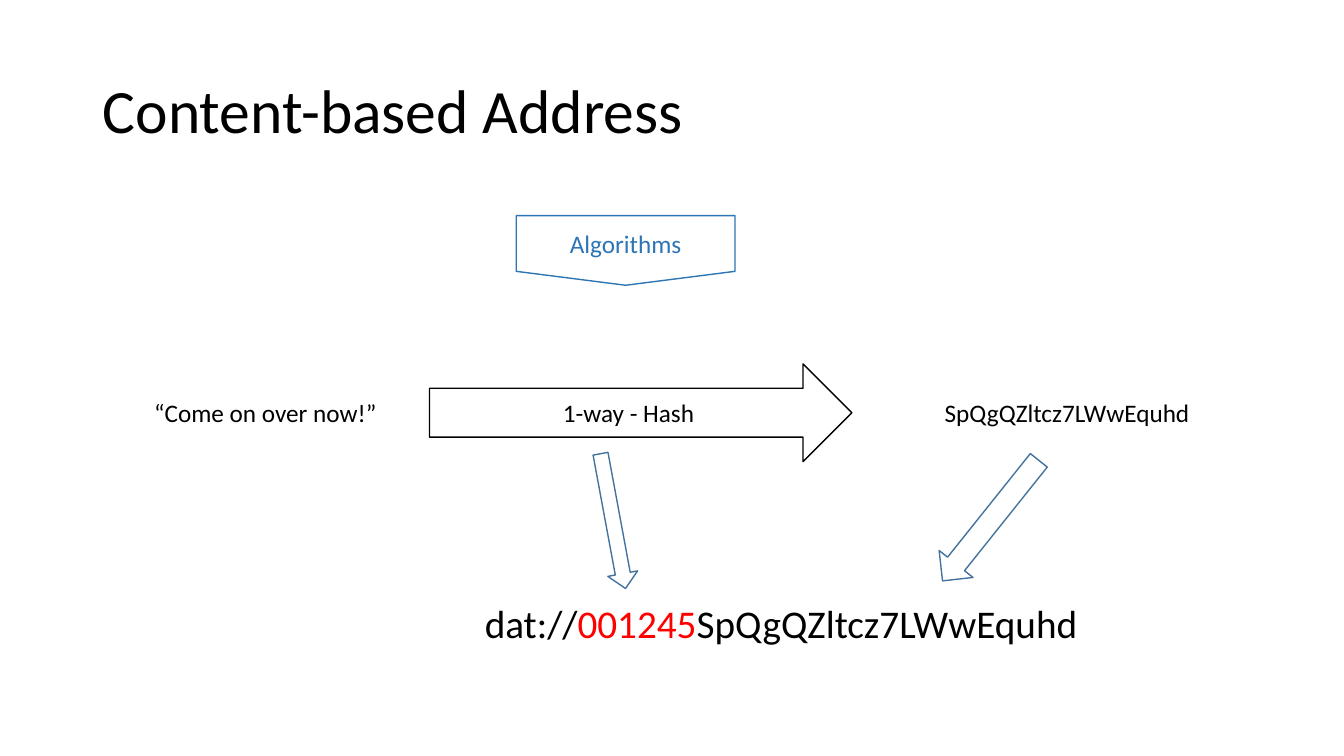
from dataclasses import dataclass

from pptx import Presentation
from pptx.dml.color import RGBColor
from pptx.enum.shapes import MSO_SHAPE
from pptx.enum.text import MSO_ANCHOR, MSO_AUTO_SIZE, PP_ALIGN
from pptx.util import Inches, Pt


@dataclass(frozen=True)
class Theme:
    font: str = "Calibri"
    ink: str = "000000"
    accent: str = "2E75B6"
    pointer: str = "43739E"
    highlight: str = "FF0000"
    title: int = 44
    address: int = 28
    label: int = 18
    outline: int = 1


def apply_formats(target, formats):
    for name, value in formats.items():
        setattr(target, name, value)


class SlideBuilder:
    """Places elements by (left, top, width, height) in percent of the slide."""

    def __init__(self, deck, theme):
        self.deck = deck
        self.theme = theme
        self.slide = deck.slides.add_slide(deck.slide_layouts[5])

    def box(self, area):
        sides = (self.deck.slide_width, self.deck.slide_height) * 2
        return [round(side * share / 100) for side, share in zip(sides, area)]

    def fill_frame(self, frame, runs, size, frame_formats, paragraph_formats):
        """Fill a text frame with one paragraph of (text, colour) runs."""
        apply_formats(frame, frame_formats)
        paragraph = frame.paragraphs[0]
        apply_formats(paragraph, paragraph_formats)
        for text, colour in runs:
            run = paragraph.add_run()
            run.text = text
            apply_formats(run.font, {"name": self.theme.font, "size": Pt(size)})
            run.font.color.rgb = RGBColor.from_string(colour)

    def title(self, text, area):
        heading = self.slide.shapes.title
        sides = ("left", "top", "width", "height")
        apply_formats(heading, dict(zip(sides, self.box(area))))
        self.fill_frame(
            heading.text_frame, [(text, self.theme.ink)], self.theme.title,
            {"vertical_anchor": MSO_ANCHOR.MIDDLE, "auto_size": MSO_AUTO_SIZE.NONE},
            {"alignment": PP_ALIGN.LEFT, "line_spacing": 0.9},
        )

    def text(self, runs, size, area, wrap=False):
        caption = self.slide.shapes.add_textbox(*self.box(area))
        self.fill_frame(
            caption.text_frame, runs, size,
            {"word_wrap": wrap, "auto_size": MSO_AUTO_SIZE.SHAPE_TO_FIT_TEXT},
            {"alignment": PP_ALIGN.LEFT},
        )

    def outline(self, kind, colour, area, text=None, rotation=0):
        figure = self.slide.shapes.add_shape(kind, *self.box(area))
        figure.rotation = rotation
        figure.shadow.inherit = False
        figure.fill.background()
        figure.line.color.rgb = RGBColor.from_string(colour)
        figure.line.width = Pt(self.theme.outline)
        if text:
            self.fill_frame(
                figure.text_frame, [(text, colour)], self.theme.label,
                {"vertical_anchor": MSO_ANCHOR.MIDDLE, "word_wrap": True},
                {"alignment": PP_ALIGN.CENTER},
            )


def main():
    deck = Presentation()
    apply_formats(deck, {"slide_width": Inches(13.33), "slide_height": Inches(7.5)})
    theme = Theme()
    builder = SlideBuilder(deck, theme)
    message, digest = "“Come on over now!”", "SpQgQZltcz7LWwEquhd"
    caption_top, caption_height = 51.87, 5.33

    builder.title("Content-based Address", (6.9, 5.33, 86.27, 19.33))
    builder.outline(MSO_SHAPE.FLOWCHART_OFFPAGE_CONNECTOR, theme.accent,
                    (38.41, 28.53, 16.28, 9.2), "Algorithms")
    builder.outline(MSO_SHAPE.RIGHT_ARROW, theme.ink,
                    (31.96, 48.13, 31.43, 12.93), "1-way - Hash")
    for caption, left, width in ((message, 10.73, 18.23), (digest, 69.54, 19.95)):
        builder.text([(caption, theme.ink)], theme.label,
                     (left, caption_top, width, caption_height))
    address = [("dat://", theme.ink), ("001245", theme.highlight), (digest, theme.ink)]
    builder.text(address, theme.address, (35.33, 78.67, 50.04, 11.73), wrap=True)
    for area, rotation in (((40.51, 66.93, 10.2, 4), 79.5),
                           ((67.97, 66, 11.48, 5.73), 128.6)):
        builder.outline(MSO_SHAPE.RIGHT_ARROW, theme.pointer, area, rotation=rotation)
    deck.save("out.pptx")


if __name__ == "__main__":
    main()
